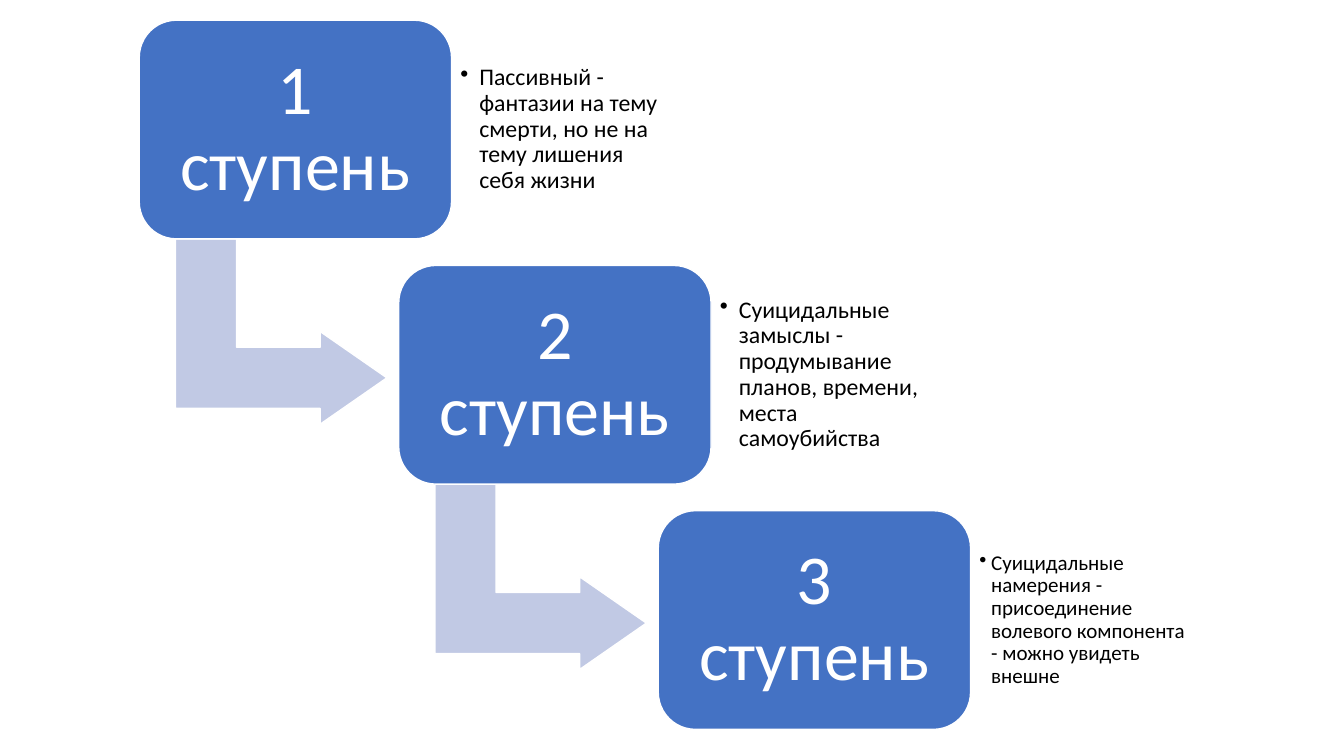
from dataclasses import dataclass

from lxml import etree
from pptx import Presentation
from pptx import util as u
from pptx.dml.color import RGBColor
from pptx.enum import shapes, text
from pptx.oxml.ns import qn


@dataclass(frozen=True)
class Theme:
    font: str = "Calibri"
    box: str = "4472C4"
    arrow: str = "C1C9E4"
    light: str = "FFFFFF"
    dark: str = "000000"
    title_size: int = 50
    caption_size: int = 17
    small_caption_size: int = 15


THEME = Theme()
STEP_X, STEP_Y = 6.54, 6.18
FIRST_LEFT, FIRST_TOP = 3.51, 0.51
BOX_WIDTH, BOX_HEIGHT = 7.87, 5.51
STEPS = [
    ("1 ступень", "Пассивный - фантазии на тему смерти, но не на тему лишения себя жизни",
     THEME.caption_size, 0.48),
    ("2 ступень", "Суицидальные замыслы - продумывание планов, времени, места самоубийства",
     THEME.caption_size, 0.48),
    ("3 ступень", "Суицидальные намерения - присоединение волевого компонента - можно увидеть внешне",
     THEME.small_caption_size, 0.3),
]


def write(shape, content, size, color, inset, align=text.PP_ALIGN.LEFT, bullet_indent=None):
    frame = shape.text_frame
    frame.word_wrap = True
    frame.vertical_anchor = text.MSO_ANCHOR.MIDDLE
    frame.margin_left = frame.margin_right = u.Cm(inset)
    frame.margin_top = frame.margin_bottom = u.Cm(inset)
    paragraph = frame.paragraphs[0]
    paragraph.alignment = align
    paragraph.line_spacing = 0.9
    run = paragraph.add_run()
    run.text = content
    run.font.name = THEME.font
    run.font.size = u.Pt(size)
    run.font.color.rgb = RGBColor.from_string(color)
    if bullet_indent:
        properties = paragraph._p.get_or_add_pPr()
        properties.set("marL", str(u.Cm(bullet_indent)))
        properties.set("indent", str(-u.Cm(bullet_indent)))
        etree.SubElement(properties, qn("a:buChar")).set("char", "•")


class StepSlide:
    """Draws the parts of a descending staircase on one slide."""

    def __init__(self, slide, theme):
        self.slide = slide
        self.theme = theme

    def add_filled(self, kind, left, top, width, height, fill, adjustments):
        shape = self.slide.shapes.add_shape(
            kind, u.Cm(left), u.Cm(top), u.Cm(width), u.Cm(height))
        shape.shadow.inherit = False
        shape.fill.solid()
        shape.fill.fore_color.rgb = RGBColor.from_string(fill)
        shape.line.color.rgb = RGBColor.from_string(self.theme.light)
        shape.line.width = u.Pt(1)
        for index, value in enumerate(adjustments):
            shape.adjustments[index] = value
        return shape

    def add_arrow(self, left, top):
        arrow = self.add_filled(shapes.MSO_SHAPE.BENT_UP_ARROW, left + 1.24, top + 5.18,
                                4.67, 5.33, self.theme.arrow, (0.33, 0.25, 0.36))
        arrow.rotation = 90

    def add_box(self, left, top, title):
        box = self.add_filled(shapes.MSO_SHAPE.ROUNDED_RECTANGLE, left, top,
                              BOX_WIDTH, BOX_HEIGHT, self.theme.box, (0.17,))
        write(box, title, self.theme.title_size, self.theme.light, 0.5,
              align=text.PP_ALIGN.CENTER)

    def add_caption(self, left, top, caption, size, indent):
        box = self.slide.shapes.add_textbox(
            u.Cm(left + BOX_WIDTH), u.Cm(top + 0.53), u.Cm(5.74), u.Cm(4.45))
        write(box, caption, size, self.theme.dark, 0.22, bullet_indent=indent)


def main():
    presentation = Presentation()
    presentation.slide_width = u.Cm(33.87)
    presentation.slide_height = u.Cm(19.05)
    slide = presentation.slides.add_slide(presentation.slide_layouts[6])
    staircase = StepSlide(slide, THEME)
    for index, (title, caption, size, indent) in enumerate(STEPS):
        left = FIRST_LEFT + index * STEP_X
        top = FIRST_TOP + index * STEP_Y
        if index < len(STEPS) - 1:
            staircase.add_arrow(left, top)
        staircase.add_box(left, top, title)
        staircase.add_caption(left, top, caption, size, indent)
    presentation.save("out.pptx")


if __name__ == "__main__":
    main()
